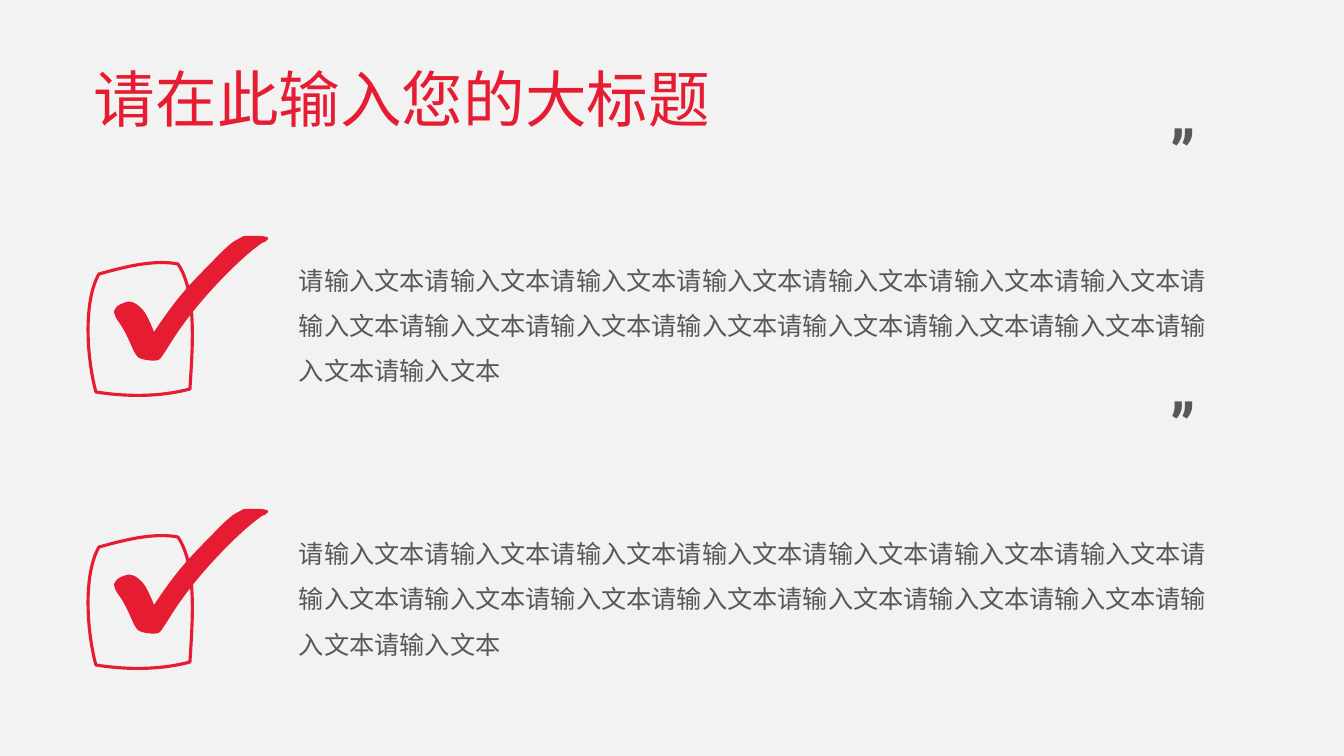
from dataclasses import dataclass

from lxml import etree
from pptx import Presentation
from pptx.dml.color import RGBColor
from pptx.enum.shapes import MSO_SHAPE
from pptx.enum.text import MSO_ANCHOR
from pptx.oxml.ns import qn
from pptx.util import Pt

RECTANGLE = MSO_SHAPE.RECTANGLE
TOP = MSO_ANCHOR.TOP
MIDDLE = MSO_ANCHOR.MIDDLE
BOTTOM = MSO_ANCHOR.BOTTOM

EMU_PER_PX = 914400 / 100.8


@dataclass(frozen=True)
class Theme:
    background: RGBColor = RGBColor(0xF2, 0xF2, 0xF2)
    accent: RGBColor = RGBColor(0xE6, 0x1C, 0x32)
    body: RGBColor = RGBColor(0x58, 0x58, 0x58)
    text_font: str = "Noto Sans CJK SC"
    quote_font: str = "Roboto Condensed"
    title_size: int = 44
    body_size: int = 18
    quote_size: int = 48
    outline_width: float = 2.25


THEME = Theme()

TITLE = "请在此输入您的大标题"
BODY = "请输入文本" * 16

SLIDE_BOX = (0, 0, 1344, 756)
TITLE_BOX = (84, 18, 1190, 123)
ITEM_LEFT, ITEM_TOP, ITEM_PITCH, ITEM_COUNT = 80, 230, 273, 2

TICK = [
    (74, 102),
    (82, 90), (91, 77), (101, 65),
    (111, 53), (121, 43), (131, 33),
    (141, 22), (148, 16), (153, 12),
    (158, 9), (162, 7), (164, 6),
    (165, 6), (169, 6), (175, 6),
    (181, 6), (184, 6), (187, 7),
    (188, 7), (188, 7), (188, 8),
    (188, 9), (188, 10), (187, 10),
    (187, 11), (185, 12), (182, 13),
    (169, 22), (154, 36), (137, 54),
    (120, 72), (103, 93), (90, 114),
    (85, 122), (81, 128), (80, 129),
    (78, 131), (73, 131), (66, 130),
    (61, 129), (58, 128), (57, 126),
    (56, 125), (54, 122), (52, 117),
    (48, 108), (44, 99), (38, 91),
    (35, 87), (34, 83), (34, 81),
    (35, 78), (37, 76), (41, 74),
    (46, 72), (49, 71), (51, 72),
    (54, 72), (58, 75), (62, 79),
    (66, 83), (70, 92), (74, 102),
]
CHECKBOX = [
    (19, 44),
    (3, 72), (7, 129), (16, 162),
    (41, 166), (76, 168), (110, 159),
    (112, 124), (118, 63), (98, 34),
    (73, 29), (41, 38), (19, 44),
]


def px(length):
    return round(length * EMU_PER_PX)


def bend_segments(outline):
    segments = list(outline._element.iter(qn("a:lnTo")))
    for first in range(0, len(segments), 3):
        curve = etree.Element(qn("a:cubicBezTo"))
        segments[first].addprevious(curve)
        for segment in segments[first:first + 3]:
            curve.append(segment[0])
            segment.getparent().remove(segment)


def add_outline(slide, nodes, left, top):
    start, *rest = [(px(left + x), px(top + y)) for x, y in nodes]
    builder = slide.shapes.build_freeform(*start)
    builder.add_line_segments(rest, close=True)
    outline = builder.convert_to_shape()
    bend_segments(outline)
    outline.shadow.inherit = False
    return outline


def add_text(slide, box, words, font_name, size, color, anchor, spacing=1.0, bold=False):
    text_box = slide.shapes.add_textbox(*map(px, box))
    frame = text_box.text_frame
    frame.word_wrap = True
    frame.vertical_anchor = anchor
    paragraph = frame.paragraphs[0]
    paragraph.line_spacing = spacing
    run = paragraph.add_run()
    run.text = words
    run.font.name = font_name
    run.font.size = Pt(size)
    run.font.bold = bold
    run.font.color.rgb = color
    east_asian = etree.SubElement(run.font._element, qn("a:ea"))
    east_asian.set("typeface", font_name)
    return text_box


def add_backdrop(slide, box):
    backdrop = slide.shapes.add_shape(RECTANGLE, *map(px, box))
    backdrop.shadow.inherit = False
    backdrop.fill.solid()
    backdrop.fill.fore_color.rgb = THEME.background
    backdrop.line.fill.background()


def add_title(slide, box):
    add_text(slide, box, TITLE, THEME.text_font, THEME.title_size,
             THEME.accent, BOTTOM, spacing=0.9)


def add_check_mark(slide, left, top):
    tick = add_outline(slide, TICK, left, top)
    tick.fill.solid()
    tick.fill.fore_color.rgb = THEME.accent
    tick.line.fill.background()

    checkbox = add_outline(slide, CHECKBOX, left, top)
    checkbox.fill.background()
    checkbox.line.color.rgb = THEME.accent
    checkbox.line.width = Pt(THEME.outline_width)


def add_check_item(slide, left, top):
    add_check_mark(slide, left, top)
    add_text(slide, (left + 209, top + 19, 934, 138), BODY, THEME.text_font,
             THEME.body_size, THEME.body, MIDDLE, spacing=1.5)
    quote = add_text(slide, (left + 1056, top - 155, 70, 92), "“", THEME.quote_font,
                     THEME.quote_size, THEME.body, TOP, bold=True)
    quote.rotation = 180


def main():
    deck = Presentation()
    deck.slide_width, deck.slide_height = map(px, SLIDE_BOX[2:])
    slide = deck.slides.add_slide(deck.slide_layouts[6])

    add_backdrop(slide, SLIDE_BOX)
    add_title(slide, TITLE_BOX)
    for row in range(ITEM_COUNT):
        add_check_item(slide, ITEM_LEFT, ITEM_TOP + row * ITEM_PITCH)

    deck.save("out.pptx")


if __name__ == "__main__":
    main()
